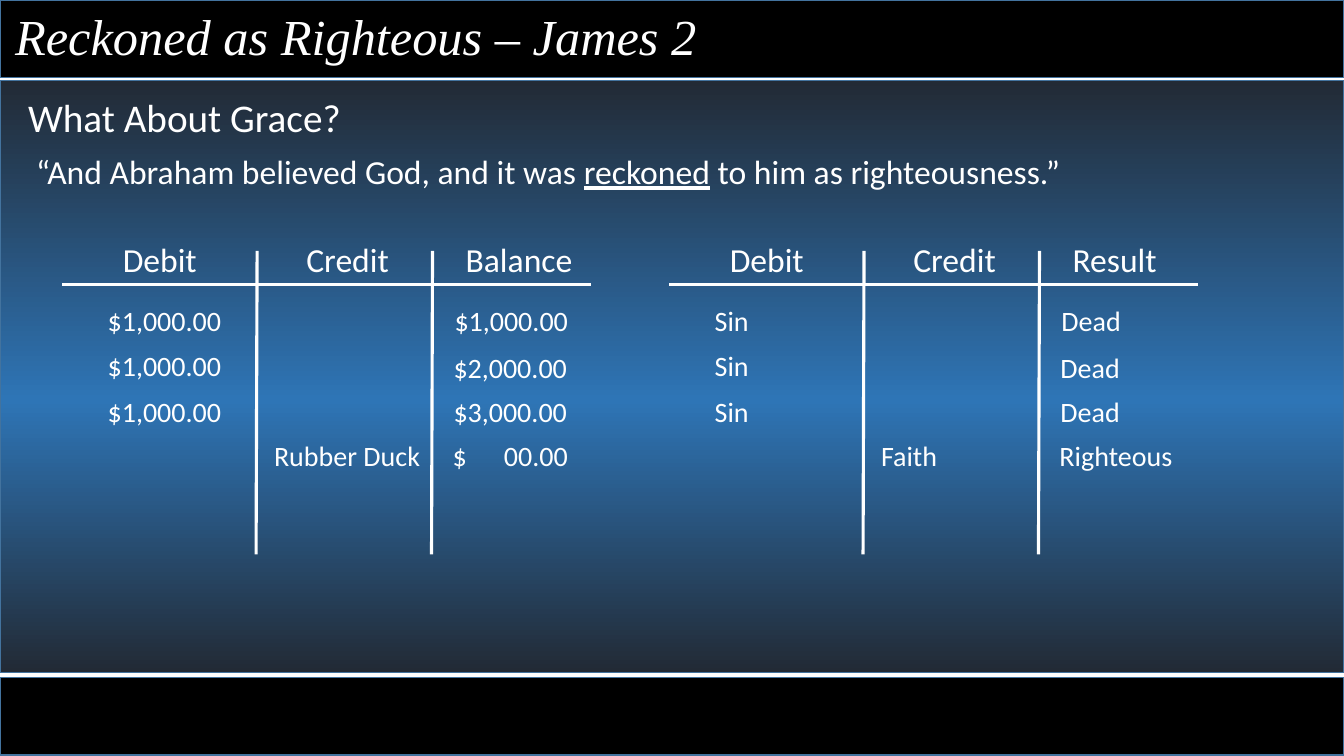
from copy import deepcopy

from lxml import etree
from pptx import Presentation
from pptx.dml.color import RGBColor
from pptx.enum.shapes import MSO_CONNECTOR, MSO_SHAPE
from pptx.enum.text import MSO_ANCHOR, MSO_AUTO_SIZE, PP_ALIGN
from pptx.oxml.ns import qn
from pptx.util import Inches, Pt

RECT = MSO_SHAPE.RECTANGLE
STRAIGHT = MSO_CONNECTOR.STRAIGHT
TOP = MSO_ANCHOR.TOP
LEFT = PP_ALIGN.LEFT
NO_FIT = MSO_AUTO_SIZE.NONE
rgb = RGBColor.from_string
WHITE, BLACK, EDGE = "FFFFFF", "000000", "43739E"
NIGHT, BLUE = "222A35", "2E75B6"


def add_text(shapes, text, x, y, w, h, size):
    box = shapes.add_textbox(Inches(x), Inches(y), Inches(w), Inches(h))
    tf = box.text_frame
    tf.word_wrap = False
    p = tf.paragraphs[0]
    for i, part in enumerate(text.split("_")):
        r = p.add_run()
        r.text = part
        r.font.name = "Calibri"
        r.font.size = Pt(size)
        r.font.color.rgb = rgb(WHITE)
        if i % 2:
            r.font.underline = True
    return p


def add_line(shapes, x1, y1, x2, y2):
    line = shapes.add_connector(STRAIGHT, Inches(x1), Inches(y1), Inches(x2), Inches(y2))
    line.line.color.rgb = rgb(WHITE)
    line.line.width = Pt(2.25)
    etree.SubElement(line._element.spPr, qn("a:effectLst"))


prs = Presentation()
prs.slide_width = Inches(13.33)
prs.slide_height = Inches(7.5)
s = prs.slides.add_slide(prs.slide_layouts[5])

for y, h in [(0, 0.77), (6.72, 0.77), (0.8, 5.87)]:
    band = s.shapes.add_shape(RECT, 0, Inches(y), Inches(13.33), Inches(h))
    band.shadow.inherit = False
    band.fill.solid()
    band.fill.fore_color.rgb = rgb(BLACK)
    band.line.color.rgb = rgb(EDGE)
    band.line.width = Pt(1)

band.fill.gradient()
band.fill.gradient_angle = 270
stop_list = band._element.spPr.find(qn("a:gradFill")).find(qn("a:gsLst"))
stop_list.append(deepcopy(stop_list[0]))
for stop, (position, color) in zip(band.fill.gradient_stops, [(0, NIGHT), (0.54, BLUE), (1, NIGHT)]):
    stop.position = position
    stop.color.rgb = rgb(color)

title = s.shapes.title
title.left, title.top, title.width, title.height = Inches(0.05), 0, Inches(7.03), Inches(0.71)
tf = title.text_frame
tf.text = "Reckoned as Righteous – James 2"
tf.word_wrap = False
tf.auto_size = NO_FIT
tf.vertical_anchor = TOP
p = tf.paragraphs[0]
p.alignment = LEFT
p.font.name = "Times New Roman"
p.font.size = Pt(36)
p.font.italic = True
p.font.color.rgb = rgb(WHITE)
s.shapes._spTree.append(title._element)

add_text(s.shapes, "What About Grace?", 0.18, 0.88, 3.34, 0.57, 28)
add_text(s.shapes, "“And Abraham believed God, and it was _reckoned_ to him as righteousness.”",
         0.26, 1.45, 10.47, 0.5, 24)

ledgers = [
    (0.62, ("Balance", 1.27), ("$1,000.00", 1.34), ("Rubber Duck", 1.66),
     [("$1,000.00", 1.34), ("$2,000.00", 1.34), ("$3,000.00", 1.34), ("$\t00.00", 1.36)]),
    (6.64, ("Result", 1.04), ("Sin", 0.54), ("Faith", 0.77),
     [("Dead", 0.8), ("Dead", 0.8), ("Dead", 0.8), ("Righteous", 1.33)]),
]
debit_rows = [2.96, 3.41, 3.86]
total_spots = [(3.79, 2.96), (3.78, 3.43), (3.78, 3.86), (3.77, 4.3)]

for x, (heading, heading_w), (debit, debit_w), (credit, credit_w), totals in ledgers:
    frame = s.shapes.add_group_shape().shapes
    for text, dx, w in [("Debit", 0.5, 0.94), ("Credit", 2.32, 1.03), (heading, 3.9, heading_w)]:
        add_text(frame, text, x + dx, 2.32, w, 0.5, 24)
    add_line(frame, x, 2.82, x + 5.24, 2.82)
    for dx in (1.93, 3.67):
        add_line(frame, x + dx, 2.49, x + dx - 0.01, 5.5)

    for y in debit_rows:
        add_text(s.shapes, debit, x + 0.35, y, debit_w, 0.44, 20)
    add_text(s.shapes, credit, x + 2, 4.3, credit_w, 0.44, 20)
    for (text, w), (dx, y) in zip(totals, total_spots):
        p = add_text(s.shapes, text, x + dx, y, w, 0.44, 20)
        if "\t" in text:
            tabs = etree.SubElement(p._p.get_or_add_pPr(), qn("a:tabLst"))
            etree.SubElement(tabs, qn("a:tab"), pos=str(Inches(0.51)), algn="l")

prs.save("out.pptx")
